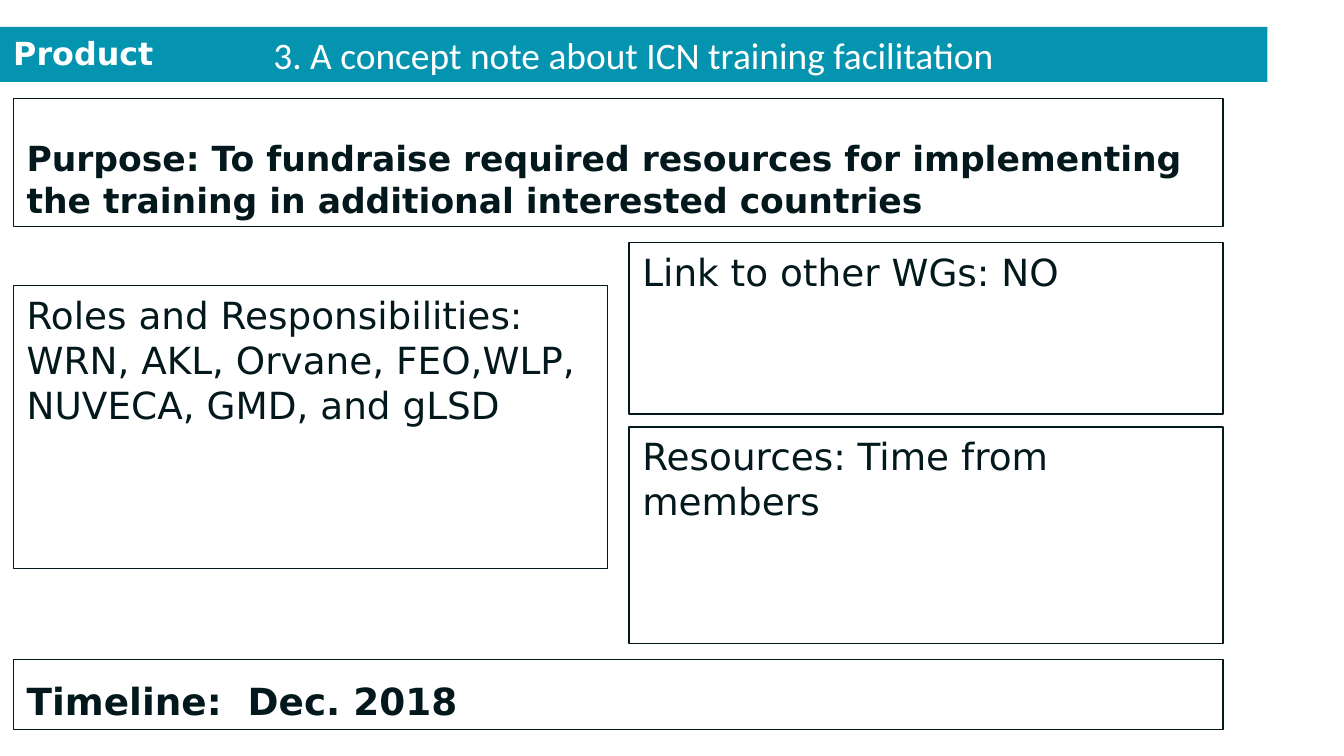
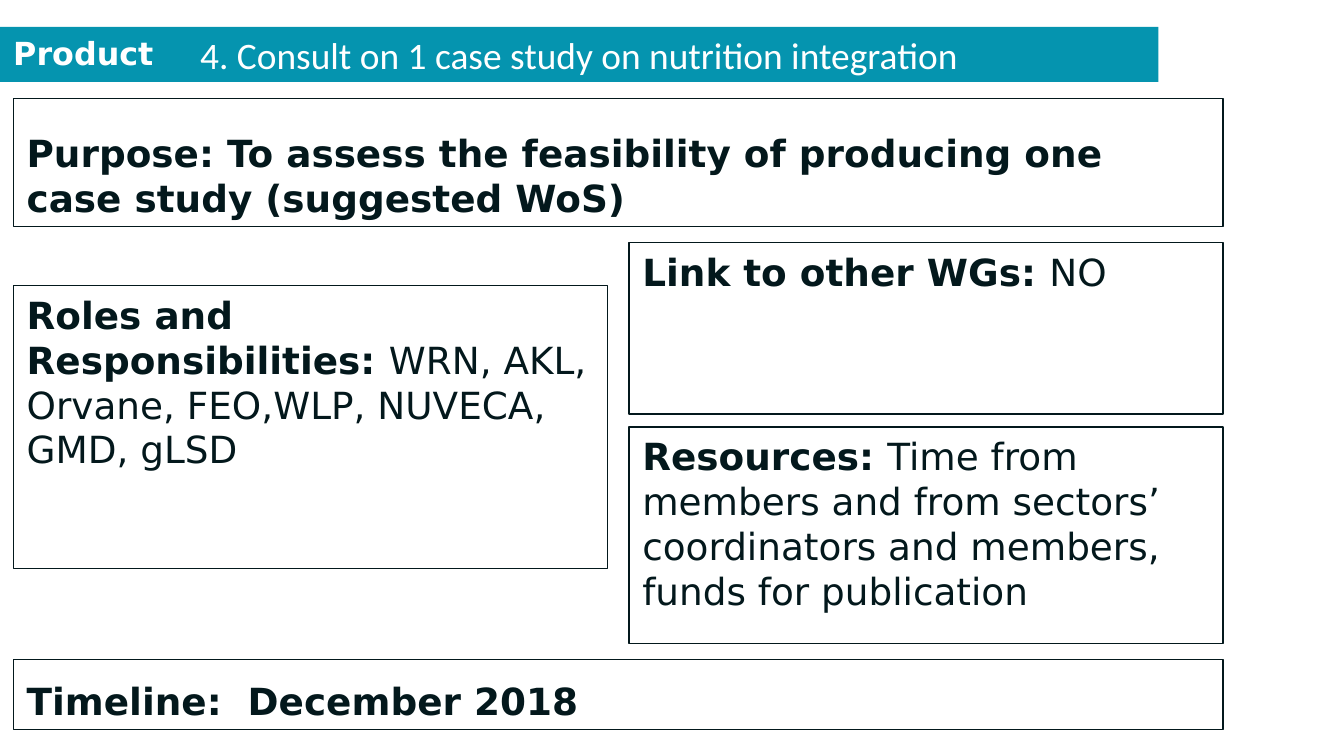
from pptx import Presentation
from pptx.dml.color import RGBColor
from pptx.enum.text import MSO_ANCHOR as Anchor, MSO_AUTO_SIZE as AutoSize, PP_ALIGN as Align
from pptx.util import Pt

TEAL = RGBColor(0x05, 0x94, 0xAF)
INK = RGBColor(0x03, 0x18, 0x1C)
WHITE = RGBColor(0xFF, 0xFF, 0xFF)
BODY_FONT = "DejaVu Sans"
TITLE_FONT = "Calibri"

LEFT, FULL_WIDTH, COLUMN_WIDTH = 7.2, 648, 318.2
RIGHT = LEFT + FULL_WIDTH - COLUMN_WIDTH
BAND_TOP = 14.4
BOXES = {
    "purpose": (LEFT, 52.7, FULL_WIDTH, 68.7),
    "roles": (LEFT, 152.9, COLUMN_WIDTH, 151.8),
    "link": (RIGHT, 130, COLUMN_WIDTH, 91.8),
    "resources": (RIGHT, 228.7, COLUMN_WIDTH, 116),
    "timeline": (LEFT, 353.3, FULL_WIDTH, 37.4),
}
BOTTOM_ANCHORED = ("purpose", "timeline")
PARTNERS = "WRN, AKL, Orvane, FEO,WLP, NUVECA, GMD,"

PRODUCTS = [
    {
        "title": " 3. A concept note about ICN training facilitation ",
        "band_width": 679,
        "purpose_size": 18.5,
        "purpose": [("Purpose: To fundraise required resources for implementing "
                     "the training in additional interested countries", True)],
        "roles": [(f"Roles and Responsibilities: {PARTNERS} and gLSD", False)],
        "link": [("Link to other WGs: NO", False)],
        "resources": [("Resources: Time from members", False)],
        "timeline": [("Timeline:  Dec. 2018", True)],
    },
    {
        "title": " 4. Consult on 1 case study on nutrition integration ",
        "band_width": 620.6,
        "purpose_size": 20,
        "purpose": [("Purpose: To assess the feasibility of producing one "
                     "case study (suggested WoS)", True)],
        "roles": [("Roles and Responsibilities: ", True),
                  (f"{PARTNERS} gLSD", False)],
        "link": [("Link to other WGs: ", True), ("NO", False)],
        "resources": [("Resources: ", True),
                      ("Time from members and from sectors’ coordinators "
                       "and members, funds for publication", False)],
        "timeline": [("Timeline:  December 2018", True)],
    },
]


def place(shape, box):
    """Move and size a shape to a box given in points."""
    shape.left, shape.top, shape.width, shape.height = map(Pt, box)


def style(span, font, size, color, bold=False):
    """Format one run of text."""
    span.font.name = font
    span.font.size = Pt(size)
    span.font.bold = bold
    span.font.color.rgb = color


def add_text(page, box, spans, size, color, anchor=Anchor.TOP):
    """Add a wrapped text box made of (text, bold) spans."""
    shape = page.shapes.add_textbox(*map(Pt, box))
    frame = shape.text_frame
    frame.word_wrap = True
    frame.vertical_anchor = anchor
    for text, bold in spans:
        span = frame.paragraphs[0].add_run()
        span.text = text
        style(span, BODY_FONT, size, color, bold)
    return shape


def add_band(page, title, box):
    """Turn the title into a coloured band with the Product label over it."""
    left, top, _, _ = box
    band = page.shapes.title
    place(band, box)
    band.fill.solid()
    band.fill.fore_color.rgb = TEAL
    frame = band.text_frame
    frame.text = title
    frame.word_wrap = True
    frame.auto_size = AutoSize.NONE
    frame.vertical_anchor = Anchor.MIDDLE
    para = frame.paragraphs[0]
    para.alignment = Align.CENTER
    style(para.runs[0], TITLE_FONT, 20, WHITE)
    add_text(page, (left, top, 671, 27.4), [("Product", True)], 17, WHITE)


def add_panel(page, box, spans, size, anchor):
    """Add one outlined panel."""
    panel = add_text(page, box, spans, size, INK, anchor)
    panel.line.color.rgb = INK
    panel.line.width = Pt(0.75)


def add_product_slide(deck, product):
    """Add a slide describing one product."""
    page = deck.slides.add_slide(deck.slide_layouts[5])
    add_band(page, product["title"], (0, BAND_TOP, product["band_width"], 29.5))
    for name, box in BOXES.items():
        size = product["purpose_size"] if name == "purpose" else 20
        anchor = Anchor.BOTTOM if name in BOTTOM_ANCHORED else Anchor.TOP
        add_panel(page, box, product[name], size, anchor)


def main():
    """Build and save the deck."""
    deck = Presentation()
    deck.slide_width, deck.slide_height = Pt(720), Pt(405)
    for product in PRODUCTS:
        add_product_slide(deck, product)
    deck.save("out.pptx")


if __name__ == "__main__":
    main()
